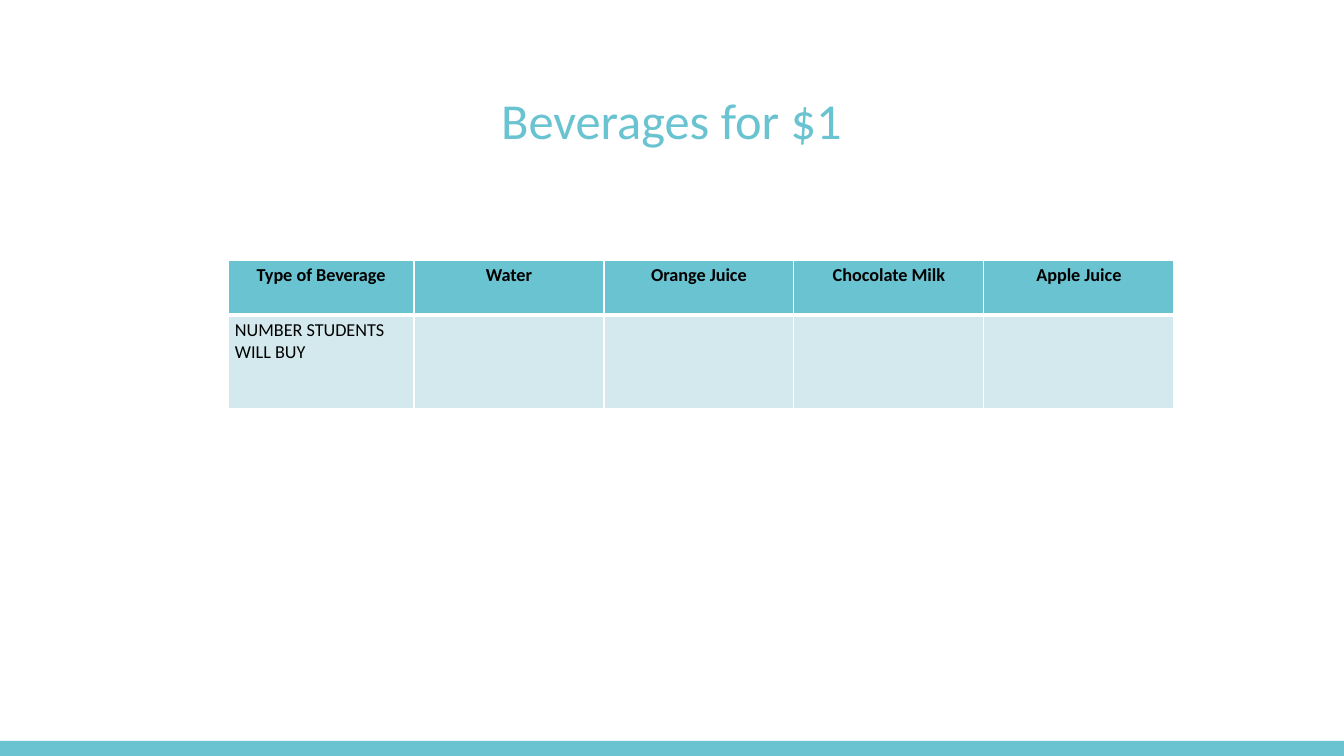
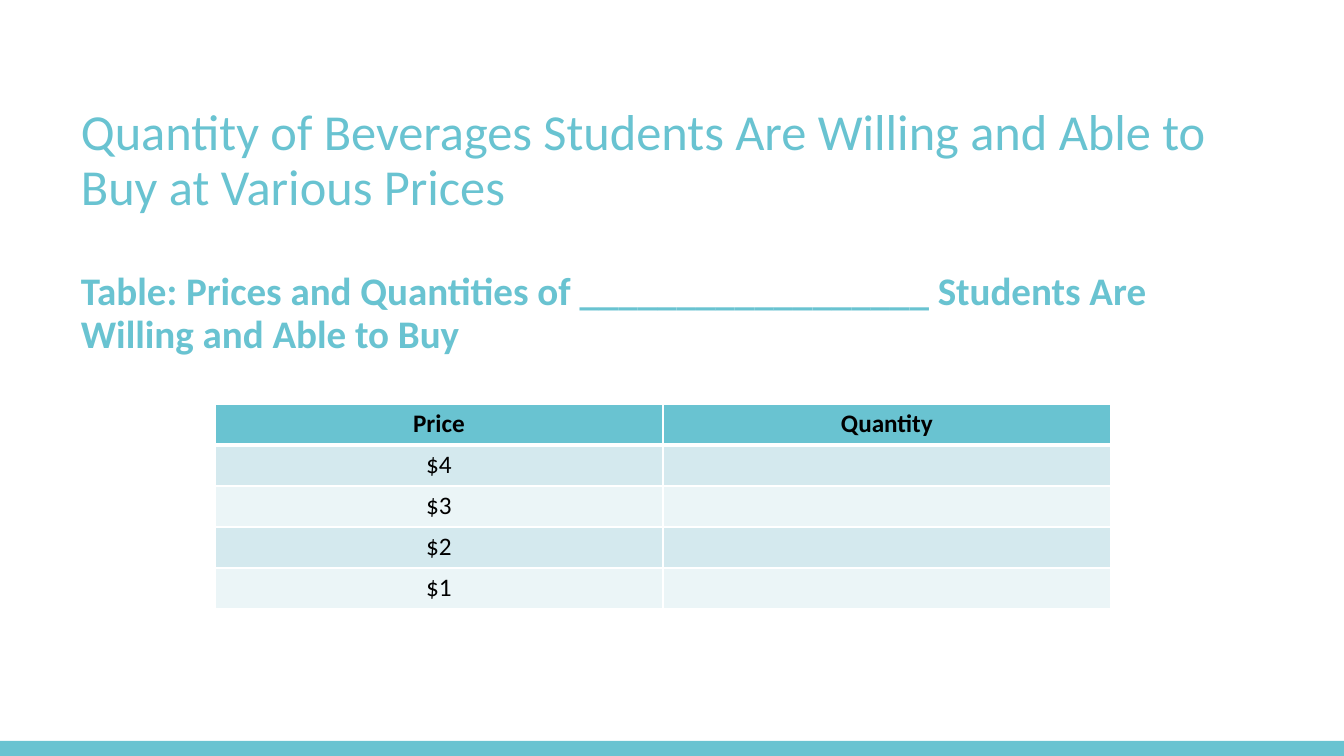
"""Build two slides with tables for recording beverage demand."""
from lxml.etree import SubElement
from pptx import Presentation
from pptx.dml.color import RGBColor
from pptx.enum.shapes import MSO_SHAPE
from pptx.enum.text import MSO_ANCHOR, PP_ALIGN
from pptx.oxml.ns import qn
from pptx.util import Emu, Pt

PX = 914400 / 100.8
FONT = "Calibri"
COLORS = {
    "accent": "69C3D1",
    "band_dark": "D4E9EE",
    "band_light": "EBF5F7",
    "text": "000000",
    "border": "FFFFFF",
}


def px(length):
    """Turn pixels into EMU."""
    return Emu(round(length * PX))


def style_text(paragraph, size, color, bold, align):
    """Set the font and alignment of one paragraph."""
    paragraph.alignment = align
    paragraph.font.name = FONT
    paragraph.font.size = Pt(size)
    paragraph.font.bold = bold
    paragraph.font.color.rgb = RGBColor.from_string(COLORS[color])


SLIDES = [
    {
        "title_box": (92, 90, 1159, 66),
        "title_align": PP_ALIGN.CENTER,
        "title": [("Beverages for $1", 36, False, 0)],
        "table_at": (228, 260),
        "columns": [186] + [190] * 4,
        "rows": [55, 94],
        "margins": (7, 4),
        "size": 13,
        "body_align": PP_ALIGN.LEFT,
        "cells": [
            ["Type of Beverage", "Water", "Orange Juice", "Chocolate Milk", "Apple Juice"],
            ["NUMBER STUDENTS WILL BUY", "", "", "", ""],
        ],
    },
    {
        "title_box": (71, 98, 1159, 268),
        "title_align": PP_ALIGN.LEFT,
        "title": [
            ("Quantity of Beverages Students Are Willing and Able to Buy at Various Prices", 36, False, 0),
            ("Table: Prices and Quantities of __________________ Students Are Willing and Able to Buy", 27.9, True, 40),
        ],
        "table_at": (215, 404),
        "columns": [448] * 2,
        "rows": [41] * 5,
        "margins": (10, 5),
        "size": 18,
        "body_align": PP_ALIGN.CENTER,
        "cells": [["Price", "Quantity"], ["$4", ""], ["$3", ""], ["$2", ""], ["$1", ""]],
    },
]

presentation = Presentation()
presentation.slide_width = px(1344)
presentation.slide_height = px(756)

for content in SLIDES:
    slide = presentation.slides.add_slide(presentation.slide_layouts[6])

    band = slide.shapes.add_shape(MSO_SHAPE.RECTANGLE, 0, px(741), px(1344), px(15))
    band.shadow.inherit = False
    band.fill.solid()
    band.fill.fore_color.rgb = RGBColor.from_string(COLORS["accent"])
    band.line.fill.background()

    title_frame = slide.shapes.add_textbox(*map(px, content["title_box"])).text_frame
    title_frame.word_wrap = True
    title_frame.vertical_anchor = MSO_ANCHOR.MIDDLE
    for index, (text, size, bold, space_before) in enumerate(content["title"]):
        paragraph = title_frame.add_paragraph() if index else title_frame.paragraphs[0]
        paragraph.text = text
        paragraph.line_spacing = 0.9
        paragraph.space_before = Pt(space_before)
        style_text(paragraph, size, "accent", bold, content["title_align"])

    columns, rows = content["columns"], content["rows"]
    left, top = content["table_at"]
    table = slide.shapes.add_table(
        len(rows), len(columns), px(left), px(top), px(sum(columns)), px(sum(rows))
    ).table
    table.first_row = False
    table.horz_banding = False
    for column, width in zip(table.columns, columns):
        column.width = px(width)
    for row, height in zip(table.rows, rows):
        row.height = px(height)

    side_margin, end_margin = map(px, content["margins"])
    for row_index, texts in enumerate(content["cells"]):
        header = row_index == 0
        fill = "accent" if header else "band_dark" if row_index % 2 else "band_light"
        align = PP_ALIGN.CENTER if header else content["body_align"]
        for column_index, text in enumerate(texts):
            cell = table.cell(row_index, column_index)
            cell.text = text
            cell.margin_left = cell.margin_right = side_margin
            cell.margin_top = cell.margin_bottom = end_margin
            style_text(cell.text_frame.paragraphs[0], content["size"], "text", header, align)
            properties = cell._tc.get_or_add_tcPr()
            for side in "LRTB":
                width = Pt(3 if header and side == "B" else 1)
                border = SubElement(properties, qn(f"a:ln{side}"), w=str(width))
                border_fill = SubElement(border, qn("a:solidFill"))
                SubElement(border_fill, qn("a:srgbClr"), val=COLORS["border"])
            cell.fill.solid()
            cell.fill.fore_color.rgb = RGBColor.from_string(COLORS[fill])

presentation.save("out.pptx")
